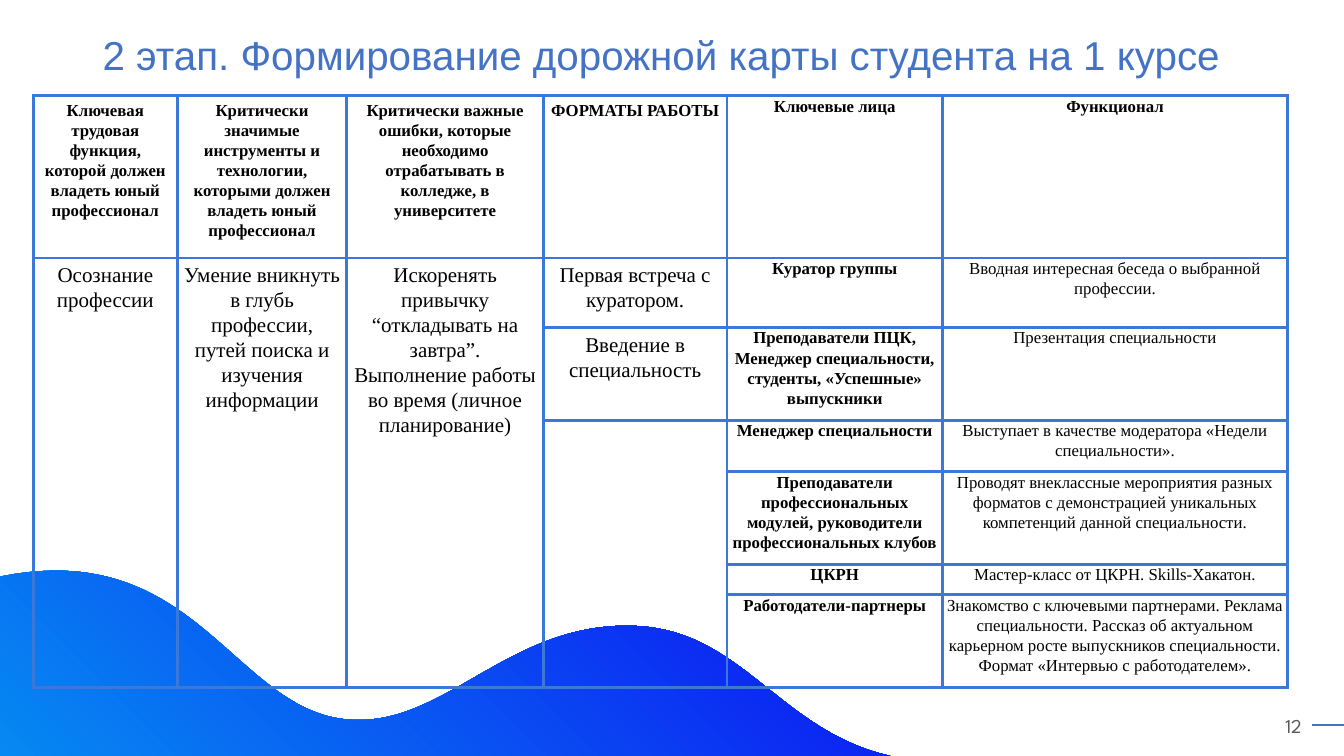
"""Build the slide with the first-year student road map table."""
from lxml import etree
from pptx import Presentation
from pptx.dml.color import RGBColor
from pptx.enum.shapes import MSO_CONNECTOR
from pptx.enum.text import MSO_ANCHOR, PP_ALIGN
from pptx.oxml import parse_xml
from pptx.oxml.ns import nsdecls, qn
from pptx.util import Inches, Pt


def color(code):
    return RGBColor.from_string(code)


def write(frame, text, size, font="Times New Roman", ink="000000", bold=False,
          align=PP_ALIGN.CENTER, spacing=1.0, after=0):
    frame.word_wrap = True
    para = frame.paragraphs[0]
    para.alignment = align
    para.line_spacing = spacing
    para.space_after = Pt(after)
    span = para.add_run()
    span.text = text
    span.font.size = Pt(size)
    span.font.name = font
    span.font.bold = bold
    span.font.color.rgb = color(ink)


deck = Presentation()
deck.slide_width, deck.slide_height = Inches(13.33), Inches(7.5)
page = deck.slides.add_slide(deck.slide_layouts[6])

dash = page.shapes.add_connector(
    MSO_CONNECTOR.STRAIGHT, Inches(13.01), Inches(7.19), Inches(13.33), Inches(7.19))
dash.line.color.rgb = color("4472C4")
dash.line.width = Pt(1.5)
etree.SubElement(dash._element.spPr, qn("a:effectLst"))

number = page.shapes.add_textbox(Inches(12.17), Inches(7.03), Inches(0.84), Inches(0.35))
write(number.text_frame, "12", 14, font="League Spartan", ink="595959", align=PP_ALIGN.RIGHT)

wave_curves = [
    [(0, 5.72), (1.87, 5.34), (2.28, 6.91), (3.32, 7.12)],
    [(3.32, 7.12), (4.36, 7.32), (4.99, 6.15), (6.31, 6.21)],
    [(6.31, 6.21), (7.37, 6.26), (7.73, 7.25), (8.83, 7.5)],
]
steps = 40
crest = []
for curve in wave_curves:
    for step in range(1, steps + 1):
        t = step / steps
        weights = [(1 - t) ** 3, 3 * t * (1 - t) ** 2, 3 * t ** 2 * (1 - t), t ** 3]
        crest.append(tuple(
            Inches(sum(w * point[axis] for w, point in zip(weights, curve))) for axis in (0, 1)))
builder = page.shapes.build_freeform(Inches(0), Inches(5.72))
builder.add_line_segments(crest + [(Inches(0), Inches(7.5))], close=True)
wave = builder.convert_to_shape()
wave.shadow.inherit = False
wave.line.fill.background()
wave.fill.gradient()
wave.fill.gradient_angle = 45
for stop, code in zip(wave.fill.gradient_stops, ["0689F2", "0D10F2"]):
    stop.color.rgb = color(code)

column_widths = [1.43, 1.68, 1.95, 1.82, 2.14, 3.42]
row_heights = [1.61, 0.69, 0.92, 0.51, 0.92, 0.3, 0.92]
rows = [
    ["Ключевая трудовая функция, которой должен владеть юный профессионал",
     "Критически значимые инструменты и технологии, которыми должен владеть юный профессионал",
     "Критически важные ошибки, которые необходимо отрабатывать в колледже, в университете",
     "ФОРМАТЫ РАБОТЫ", "Ключевые лица", "Функционал"],
    ["Осознание профессии",
     "Умение вникнуть в глубь профессии, путей поиска и изучения информации",
     "Искоренять привычку “откладывать на завтра”. Выполнение работы во время "
     "(личное планирование)",
     "Первая встреча с куратором.", "Куратор группы",
     "Вводная интересная беседа о выбранной профессии."],
    ["", "", "", "Введение в специальность",
     "Преподаватели ПЦК, Менеджер специальности, студенты, «Успешные» выпускники",
     "Презентация специальности"],
    ["", "", "", "", "Менеджер специальности",
     "Выступает в качестве модератора «Недели специальности»."],
    ["", "", "", "",
     "Преподаватели профессиональных модулей, руководители профессиональных клубов",
     "Проводят внеклассные мероприятия разных форматов с демонстрацией уникальных "
     "компетенций данной специальности."],
    ["", "", "", "", "ЦКРН", "Мастер-класс от ЦКРН. Skills-Хакатон."],
    ["", "", "", "", "Работодатели-партнеры",
     "Знакомство с ключевыми партнерами. Реклама специальности. Рассказ об актуальном "
     "карьерном росте выпускников специальности. Формат «Интервью с работодателем»."],
]
table = page.shapes.add_table(
    len(rows), len(column_widths), Inches(0.33), Inches(0.95),
    Inches(sum(column_widths)), Inches(sum(row_heights))).table
table.first_row = table.horz_banding = False
for column, width in zip(table.columns, column_widths):
    column.width = Inches(width)
for row, height in zip(table.rows, row_heights):
    row.height = Inches(height)

for r, texts in enumerate(rows):
    for c, text in enumerate(texts):
        cell = table.cell(r, c)
        side, edge = (0.06, 0.04) if c < 4 else (0, 0)
        cell.margin_left = cell.margin_right = Inches(side)
        cell.margin_top = cell.margin_bottom = Inches(edge)
        cell.fill.background()
        for position, tag in enumerate(["lnL", "lnR", "lnT", "lnB"]):
            cell._tc.get_or_add_tcPr().insert(position, parse_xml(
                f'<a:{tag} {nsdecls("a")} w="{Pt(2.25)}"><a:solidFill>'
                f'<a:srgbClr val="3C78D8"/></a:solidFill></a:{tag}>'))
        if text:
            write(cell.text_frame, text, 15 if r > 0 and c < 4 else 12,
                  bold=r == 0 or c == 4, spacing=1.08, after=8)

for c, first_row in enumerate([1, 1, 1, 3]):
    table.cell(first_row, c).merge(table.cell(len(rows) - 1, c))

title = page.shapes.add_textbox(Inches(0.92), Inches(0.15), Inches(11.5), Inches(0.83))
title.text_frame.vertical_anchor = MSO_ANCHOR.MIDDLE
write(title.text_frame, "2 этап. Формирование дорожной карты студента на 1 курсе", 28.8,
      font="Arial", ink="4472C4", align=PP_ALIGN.LEFT, spacing=0.9)

deck.save("out.pptx")
